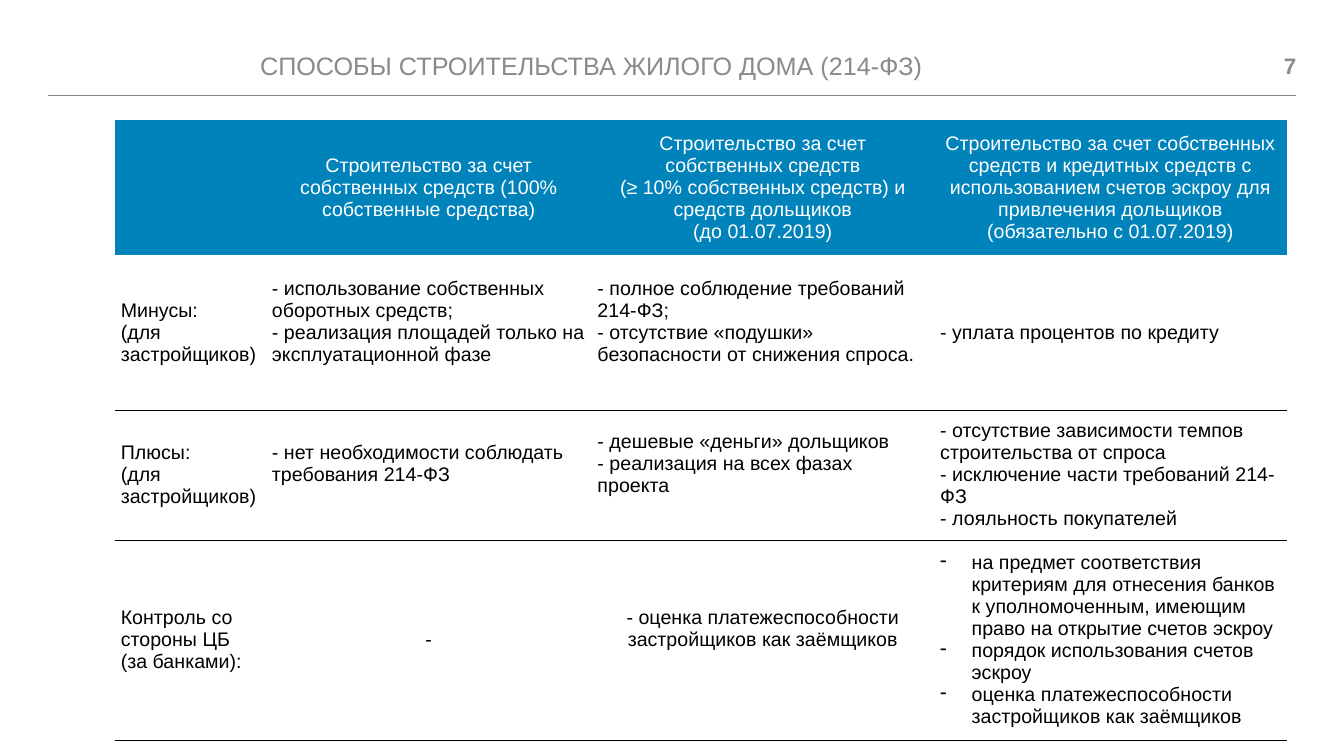
from lxml import etree
from pptx import Presentation
from pptx.dml.color import RGBColor
from pptx.enum.shapes import MSO_CONNECTOR
from pptx.enum.text import MSO_ANCHOR, PP_ALIGN
from pptx.oxml.ns import qn
from pptx.util import Pt

LEFT, CENTER, RIGHT = PP_ALIGN.LEFT, PP_ALIGN.CENTER, PP_ALIGN.RIGHT
MIDDLE = MSO_ANCHOR.MIDDLE
STRAIGHT = MSO_CONNECTOR.STRAIGHT

GRAY, BLUE, WHITE, BLACK = "888A8D", "0082BB", "FFFFFF", "000000"
COLUMN_WIDTHS = [108, 232.5, 244.8, 251.7]
ROW_HEIGHTS = [96, 111, 88.5, 134]
PADDING = 4.3
TEXT_LINE = 16  # height of one line of cell text
LIST_INDENT = 22.5

HEADER = [
    [],
    ["Строительство за счет собственных средств (100% собственные средства)"],
    ["Строительство за счет собственных средств",
     "(≥ 10% собственных средств) и средств дольщиков",
     "(до 01.07.2019)"],
    ["Строительство за счет собственных средств и кредитных средств с "
     "использованием счетов эскроу для привлечения дольщиков",
     "(обязательно с 01.07.2019)"],
]

# Each body cell: paragraphs and layout options
BODY = [
    [(["Минусы:", "(для застройщиков)"], {}),
     (["- использование собственных оборотных средств;",
       "- реализация площадей только на эксплуатационной фазе"],
      {"raised": True}),
     (["- полное соблюдение требований 214-ФЗ;",
       "- отсутствие «подушки» безопасности от снижения спроса."],
      {"raised": True}),
     (["- уплата процентов по кредиту"], {})],
    [(["Плюсы:", "(для застройщиков)"], {}),
     (["- нет необходимости соблюдать требования 214-ФЗ"], {"raised": True}),
     (["- дешевые «деньги» дольщиков", "- реализация на всех фазах проекта"],
      {"raised": True}),
     (["- отсутствие зависимости темпов строительства от спроса",
       "- исключение части требований 214-ФЗ",
       "- лояльность покупателей"], {})],
    [(["Контроль со стороны ЦБ (за банками):"], {}),
     (["-"], {"align": CENTER}),
     (["- оценка платежеспособности застройщиков как заёмщиков"],
      {"align": CENTER, "raised": True}),
     (["на предмет соответствия критериям для отнесения банков к "
       "уполномоченным, имеющим право на открытие счетов эскроу",
       "порядок использования счетов эскроу",
       "оценка платежеспособности застройщиков как заёмщиков"],
      {"bullet": "-"})],
]


def rgb(color):
    return RGBColor.from_string(color)


def set_all(target, values):
    for name, value in values.items():
        setattr(target, name, value)


def add_bullet(para, mark):
    properties = para._p.get_or_add_pPr()
    properties.set("marL", str(Pt(LIST_INDENT)))
    properties.set("indent", str(-Pt(LIST_INDENT)))
    etree.SubElement(properties, qn("a:buChar")).set("char", mark)


def write(frame, lines, size, color, align=LEFT, bold=False, bullet=None):
    for index, line in enumerate(lines):
        para = frame.paragraphs[0] if index == 0 else frame.add_paragraph()
        para.alignment = align
        if bullet:
            add_bullet(para, bullet)
        span = para.add_run()
        span.text = line
        set_all(span.font, {"name": "Arial", "size": Pt(size), "bold": bold})
        span.font.color.rgb = rgb(color)


def add_label(page, bounds, text, size, **options):
    box = page.shapes.add_textbox(*map(Pt, bounds))
    set_all(box.text_frame, {
        "word_wrap": True, "vertical_anchor": MIDDLE,
        "margin_left": 0, "margin_right": 0,
        "margin_top": 0, "margin_bottom": 0})
    write(box.text_frame, [text], size, GRAY, **options)


def add_rule(page, left, right, top):
    rule = page.shapes.add_connector(
        STRAIGHT, Pt(left), Pt(top), Pt(right), Pt(top))
    rule.line.color.rgb = rgb(GRAY)
    rule.line.width = Pt(0.5)
    etree.SubElement(rule._element.spPr, qn("a:effectLst"))


def set_borders(cell, colors):
    """Draw the sides named in colors; leave the others empty."""
    properties = cell._tc.get_or_add_tcPr()
    for side in ("lnL", "lnR", "lnT", "lnB"):
        line = etree.SubElement(properties, qn("a:" + side))
        if side in colors:
            line.set("w", str(Pt(0.5)))
            fill = etree.SubElement(line, qn("a:solidFill"))
            etree.SubElement(fill, qn("a:srgbClr")).set("val", colors[side])
        else:
            etree.SubElement(line, qn("a:noFill"))


def format_cell(cell, fill, borders, side, bottom):
    set_borders(cell, borders)
    cell.fill.solid()
    cell.fill.fore_color.rgb = rgb(fill)
    set_all(cell, {
        "vertical_anchor": MIDDLE, "margin_left": Pt(side),
        "margin_right": Pt(side), "margin_top": Pt(PADDING),
        "margin_bottom": Pt(bottom)})


def fill_header(table):
    for cell, lines in zip(table.rows[0].cells, HEADER):
        format_cell(cell, BLUE, {}, 7.2, PADDING)
        write(cell.text_frame, lines, 14, WHITE, align=CENTER)


def fill_body(table):
    for row, contents in enumerate(BODY, start=1):
        borders = {"lnB": BLACK}
        if row > 1:
            borders["lnT"] = BLACK
        for cell, (lines, options) in zip(table.rows[row].cells, contents):
            bottom = PADDING + TEXT_LINE * options.get("raised", False)
            format_cell(cell, WHITE, borders, PADDING, bottom)
            write(cell.text_frame, lines, 14, BLACK,
                  align=options.get("align", LEFT),
                  bullet=options.get("bullet"))


def add_comparison(page, left, top):
    frame = page.shapes.add_table(
        len(ROW_HEIGHTS), len(COLUMN_WIDTHS), Pt(left), Pt(top),
        Pt(sum(COLUMN_WIDTHS)), Pt(sum(ROW_HEIGHTS)))
    table = frame.table
    table.horz_banding = False
    for column, width in zip(table.columns, COLUMN_WIDTHS):
        column.width = Pt(width)
    for row, height in zip(table.rows, ROW_HEIGHTS):
        row.height = Pt(height)
    fill_header(table)
    fill_body(table)


def main():
    deck = Presentation()
    set_all(deck, {"slide_width": Pt(960), "slide_height": Pt(540)})
    page = deck.slides.add_slide(deck.slide_layouts[6])

    # Heading
    add_rule(page, 34, 926, 68.4)
    add_label(page, (867.6, 34, 58.4, 25), "7", 16, align=RIGHT, bold=True)
    add_label(page, (185.8, 34, 664.5, 25),
              "СПОСОБЫ СТРОИТЕЛЬСТВА ЖИЛОГО ДОМА (214-ФЗ)", 18)

    # Comparison of construction methods
    add_comparison(page, 82, 86)

    deck.save("out.pptx")


if __name__ == "__main__":
    main()
